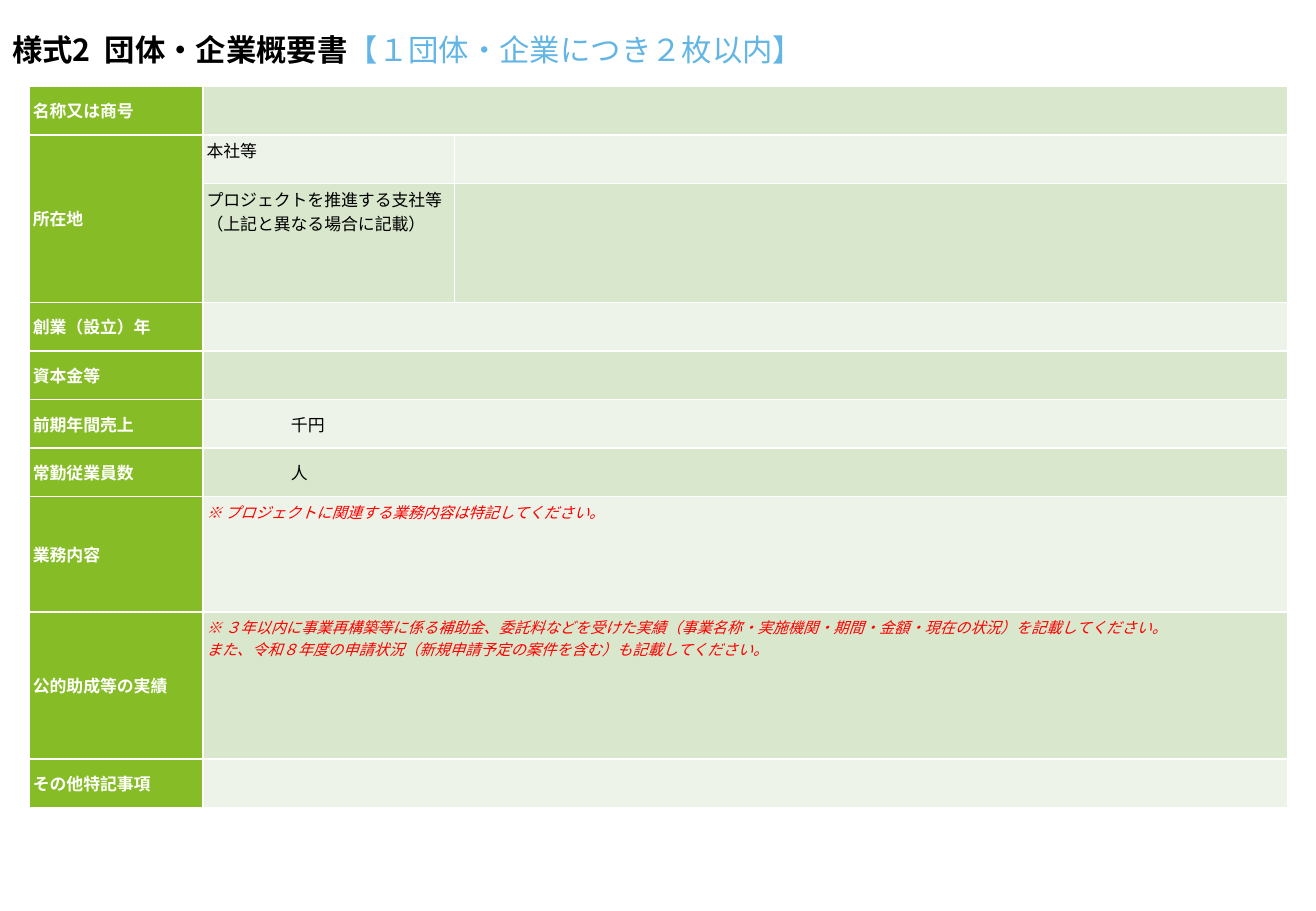
from lxml.etree import SubElement
from pptx import Presentation
from pptx.dml.color import RGBColor
from pptx.enum.text import MSO_ANCHOR, MSO_AUTO_SIZE, PP_ALIGN
from pptx.oxml.ns import qn
from pptx.util import Inches, Pt

FONT = "Noto Sans CJK JP"
WHITE = RGBColor(0xFF, 0xFF, 0xFF)
BLACK = RGBColor(0, 0, 0)
RED = RGBColor(0xFF, 0, 0)
SKY = RGBColor(0x62, 0xB5, 0xE5)
GREEN = RGBColor(0x86, 0xBC, 0x25)
BANDS = RGBColor(0xD9, 0xE7, 0xCD), RGBColor(0xED, 0xF3, 0xE8)

HEADING = {"size": Pt(18), "bold": True, "color": BLACK}
LIMIT = {"size": Pt(18), "bold": False, "color": SKY}
LABEL = {"size": Pt(10), "bold": True, "color": WHITE}
BODY = {"size": Pt(10), "bold": False, "color": BLACK}
NOTE = {"size": Pt(9), "bold": False, "italic": True, "color": RED}

PAD = 0.03
UNIT_INDENT = 5 * 10 / 72
COLUMNS = 1.43, 2.07, 6.86
ROW = 0.4
ROWS = [
    ("名称又は商号", ROW),
    ("所在地", ROW),
    ("", 0.98),
    ("創業（設立）年", ROW),
    ("資本金等", ROW),
    ("前期年間売上", ROW),
    ("常勤従業員数", ROW),
    ("業務内容", 0.95),
    ("公的助成等の実績", 1.21),
    ("その他特記事項", ROW),
]
ADDRESS_ROWS = 1, 2
ENTRIES = {
    1: (["本社等"], BODY),
    2: (["プロジェクトを推進する支社等（上記と異なる場合に記載）"], BODY),
    5: (["千円"], BODY),
    6: (["人"], BODY),
    7: (["※ プロジェクトに関連する業務内容は特記してください。"], NOTE),
    8: (["※ ３年以内に事業再構築等に係る補助金、委託料などを受けた実績"
         "（事業名称・実施機関・期間・金額・現在の状況）を記載してください。",
         "また、令和８年度の申請状況（新規申請予定の案件を含む）も記載してください。"], NOTE),
}
UNIT_ROWS = 5, 6


def add_run(p, text, style):
    r = p.add_run()
    r.text = text
    for name, value in style.items():
        if name == "color":
            r.font.color.rgb = value
        else:
            setattr(r.font, name, value)
    r.font.name = FONT
    SubElement(r.font._element, qn("a:ea"), typeface=FONT)


def set_borders(cell):
    tcPr = cell._tc.get_or_add_tcPr()
    for side in ("lnL", "lnR", "lnT", "lnB"):
        ln = SubElement(tcPr, qn(f"a:{side}"), w=str(Pt(1)))
        fill = SubElement(ln, qn("a:solidFill"))
        SubElement(fill, qn("a:srgbClr"), val=str(WHITE))


def format_cell(cell, color):
    set_borders(cell)
    cell.fill.solid()
    cell.fill.fore_color.rgb = color
    for side in ("left", "right", "top", "bottom"):
        setattr(cell, f"margin_{side}", Inches(PAD))


def write_cell(cell, lines, style, align=PP_ALIGN.LEFT):
    tf = cell.text_frame
    for i, line in enumerate(lines):
        p = tf.add_paragraph() if i else tf.paragraphs[0]
        p.alignment = align
        add_run(p, line, style)


def add_title(slide, left, top, width, height):
    sp = slide.shapes.title
    sp.left, sp.top, sp.width, sp.height = map(Inches, (left, top, width, height))
    tf = sp.text_frame
    frame = {"margin_left": 0, "margin_right": 0, "margin_top": 0, "margin_bottom": 0,
             "word_wrap": True, "auto_size": MSO_AUTO_SIZE.NONE,
             "vertical_anchor": MSO_ANCHOR.BOTTOM}
    for name, value in frame.items():
        setattr(tf, name, value)
    p = tf.paragraphs[0]
    p.alignment = PP_ALIGN.LEFT
    add_run(p, "様式2  団体・企業概要書", HEADING)
    add_run(p, "【１団体・企業につき２枚以内】", LIMIT)


def add_profile_table(slide, left, top):
    heights = [height for _, height in ROWS]
    box = map(Inches, (left, top, sum(COLUMNS), sum(heights)))
    table = slide.shapes.add_table(len(ROWS), len(COLUMNS), *box).table
    table.first_row = table.horz_banding = False
    for column, width in zip(table.columns, COLUMNS):
        column.width = Inches(width)
    for i, (label, height) in enumerate(ROWS):
        table.rows[i].height = Inches(height)
        cells = [table.cell(i, j) for j in range(len(COLUMNS))]
        for cell, color in zip(cells, (GREEN, BANDS[i % 2], BANDS[i % 2])):
            format_cell(cell, color)
        cells[0].vertical_anchor = MSO_ANCHOR.MIDDLE
        if label:
            write_cell(cells[0], [label], LABEL, PP_ALIGN.JUSTIFY)
        if i in ENTRIES:
            write_cell(cells[1], *ENTRIES[i])
        if i in UNIT_ROWS:
            cells[1].vertical_anchor = MSO_ANCHOR.MIDDLE
            cells[1].margin_left = Inches(PAD + UNIT_INDENT)
        for cell in cells:
            p = cell.text_frame.paragraphs[0]
            if not p.runs:
                SubElement(p._p, qn("a:endParaRPr"), sz="1000")
        if i not in ADDRESS_ROWS:
            cells[1].merge(cells[2])
    first, last = ADDRESS_ROWS
    table.cell(first, 0).merge(table.cell(last, 0))


def main():
    prs = Presentation()
    prs.slide_width, prs.slide_height = Inches(10.83), Inches(7.5)
    slide = prs.slides.add_slide(prs.slide_layouts[5])
    add_profile_table(slide, 0.24, 0.71)
    add_title(slide, 0.1, -0.15, 10.45, 0.71)
    prs.save("out.pptx")


if __name__ == "__main__":
    main()
